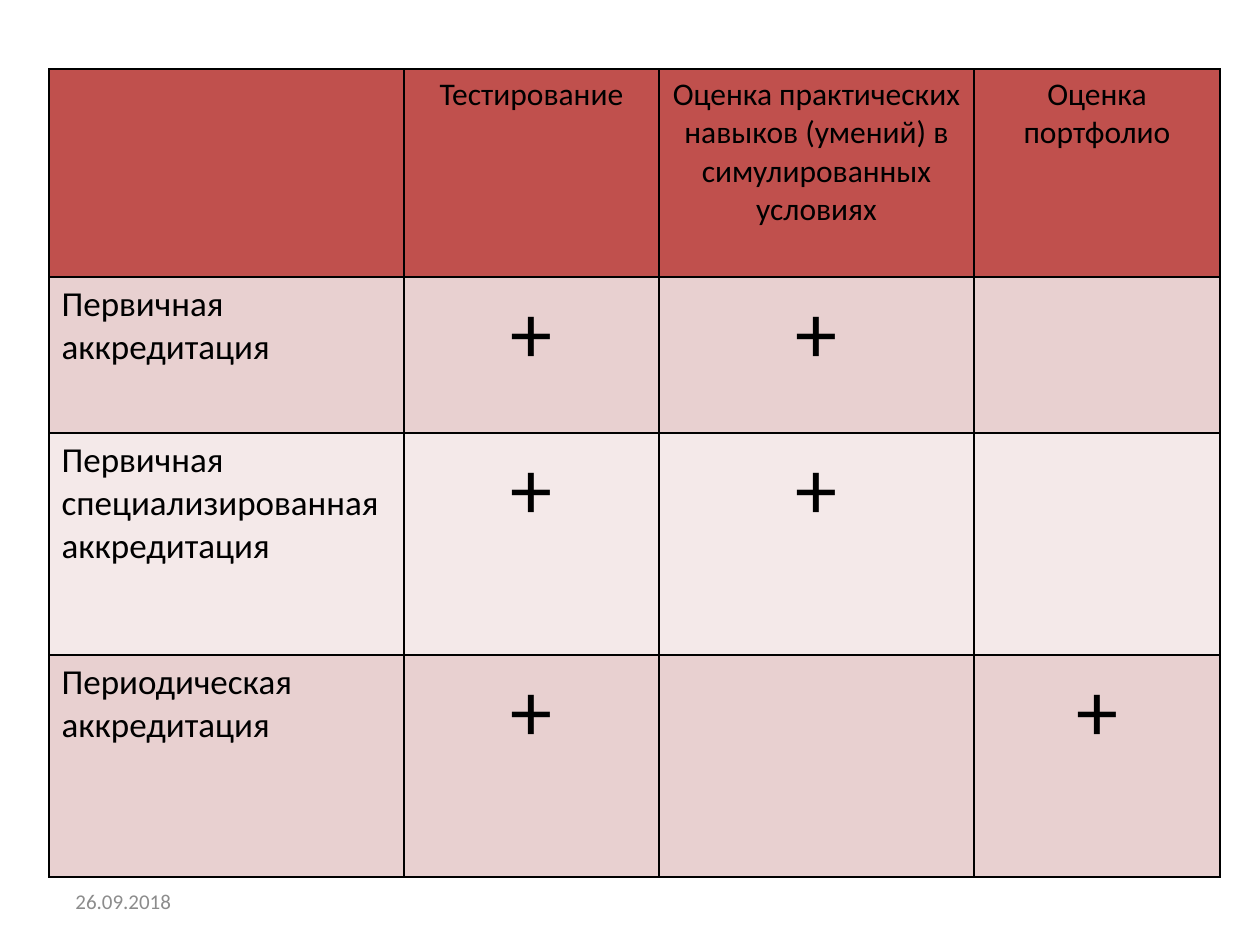
from dataclasses import dataclass

from lxml.etree import SubElement
from pptx import Presentation
from pptx.dml.color import RGBColor
from pptx.enum.text import MSO_ANCHOR, PP_ALIGN as Align
from pptx.oxml.ns import qn
from pptx.util import Pt

EMU_PER_PX = 914400 / 126


@dataclass(frozen=True)
class Theme:
    font: str = "Calibri"
    ink: str = "000000"
    muted: str = "8C8C8C"
    header: str = "C0504D"
    bands: tuple = ("E8D0D0", "F4E9E9")
    header_size: int = 18
    label_size: int = 20
    mark_size: int = 48
    date_size: int = 12
    border_width: int = 1


THEME = Theme()

COLUMN_WIDTHS = (355, 255, 315, 246)
ROW_HEIGHTS = (208, 156, 222, 222)
HEADINGS = (
    "",
    "Тестирование",
    "Оценка практических навыков (умений) в симулированных условиях",
    "Оценка портфолио",
)
ACCREDITATIONS = (
    ("Первичная аккредитация", "+", "+", ""),
    ("Первичная специализированная аккредитация", "+", "+", ""),
    ("Периодическая аккредитация", "+", "", "+"),
)


def px(length):
    return round(length * EMU_PER_PX)


def write(frame, text, size, color, align=Align.LEFT):
    para = frame.paragraphs[0]
    para.alignment = align
    para.font.size = Pt(size)
    if not text:
        return
    span = para.add_run()
    span.text = text
    span.font.name = THEME.font
    span.font.size = Pt(size)
    span.font.color.rgb = RGBColor.from_string(color)


def add_borders(cell):
    properties = cell._tc.get_or_add_tcPr()
    for side in ("lnL", "lnR", "lnT", "lnB"):
        line = SubElement(properties, qn(f"a:{side}"), w=str(Pt(THEME.border_width)))
        fill = SubElement(line, qn("a:solidFill"))
        SubElement(fill, qn("a:srgbClr"), val=THEME.ink)


def fill_cell(cell, text, size, fill, align):
    add_borders(cell)
    cell.fill.solid()
    cell.fill.fore_color.rgb = RGBColor.from_string(fill)
    write(cell.text_frame, text, size, THEME.ink, align)


def add_accreditation_table(page, left, top):
    rows = (HEADINGS, *ACCREDITATIONS)
    table = page.shapes.add_table(
        len(rows), len(HEADINGS), px(left), px(top),
        px(sum(COLUMN_WIDTHS)), px(sum(ROW_HEIGHTS)),
    ).table
    table.first_row = False
    table.horz_banding = False
    for column, width in zip(table.columns, COLUMN_WIDTHS):
        column.width = px(width)
    for row, height in zip(table.rows, ROW_HEIGHTS):
        row.height = px(height)

    for r, texts in enumerate(rows):
        fill = THEME.bands[(r - 1) % 2] if r else THEME.header
        for c, text in enumerate(texts):
            if r == 0:
                size = THEME.header_size
            else:
                size = THEME.mark_size if c and text else THEME.label_size
            align = Align.CENTER if r == 0 or c else Align.LEFT
            fill_cell(table.cell(r, c), text, size, fill, align)


def add_date(page, left, top, width, height):
    box = page.shapes.add_textbox(px(left), px(top), px(width), px(height))
    frame = box.text_frame
    frame.word_wrap = True
    frame.vertical_anchor = MSO_ANCHOR.MIDDLE
    write(frame, "26.09.2018", THEME.date_size, THEME.muted)


def main():
    deck = Presentation()
    deck.slide_width, deck.slide_height = px(1260), px(945)
    page = deck.slides.add_slide(deck.slide_layouts[6])
    add_date(page, 63, 876, 294, 50)
    add_accreditation_table(page, 49, 69)
    deck.save("out.pptx")


if __name__ == "__main__":
    main()
